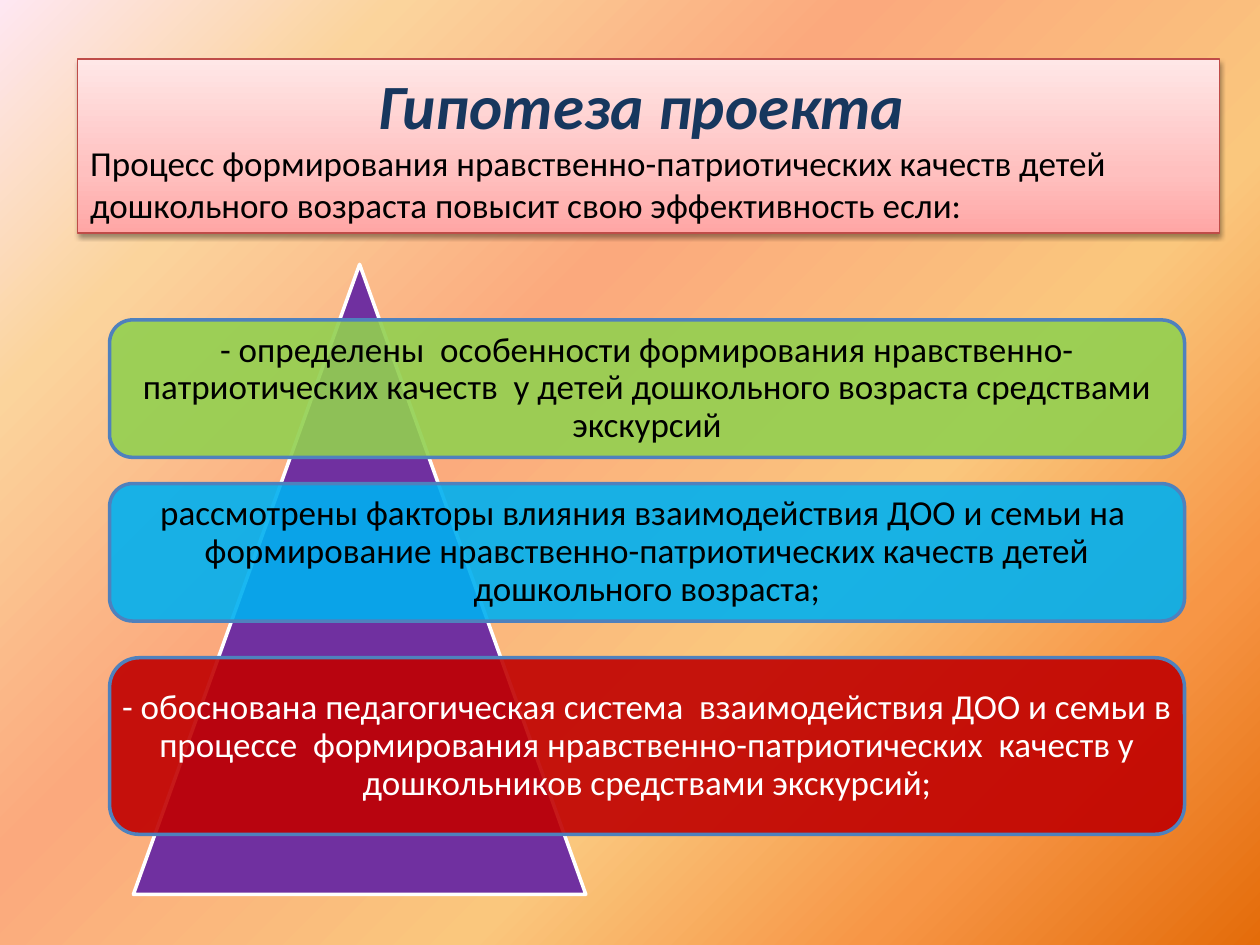
from dataclasses import dataclass

from pptx import Presentation
from pptx.dml.color import RGBColor
from pptx.enum.shapes import MSO_SHAPE
from pptx.enum.text import MSO_ANCHOR, MSO_AUTO_SIZE, PP_ALIGN
from pptx.oxml import parse_xml
from pptx.oxml.ns import nsdecls, qn
from pptx.util import Cm, Pt

TRIANGLE = MSO_SHAPE.ISOSCELES_TRIANGLE
ROUNDED = MSO_SHAPE.ROUNDED_RECTANGLE
RECTANGLE = MSO_SHAPE.RECTANGLE
MIDDLE = MSO_ANCHOR.MIDDLE
GROW = MSO_AUTO_SIZE.SHAPE_TO_FIT_TEXT
CENTER, LEFT = PP_ALIGN.CENTER, PP_ALIGN.LEFT


@dataclass(frozen=True)
class Theme:
    font: str = "Calibri"
    title_size: int = 36
    body_size: int = 20
    title: str = "17375E"
    dark: str = "000000"
    light: str = "FFFFFF"
    pyramid: str = "7030A0"
    bar_line: str = "4F81BD"
    header_line: str = "BF4C48"
    header: tuple = ((0, "FFA6A5"), (35, "FFC0BF"), (100, "FFE7E7"))
    backdrop: tuple = ((0, "E46C0A"), (18, "F79646"), (36, "FAC77D"),
                       (61, "FBA97D"), (82, "FBD49C"), (100, "FEE7F2"))


THEME = Theme()


def add_box(kind, left, top, width, height, fill, line, line_width):
    box = slide.shapes.add_shape(kind, Cm(left), Cm(top), Cm(width), Cm(height))
    box.shadow.inherit = False
    box.fill.solid()
    box.fill.fore_color.rgb = RGBColor.from_string(fill)
    box.line.color.rgb = RGBColor.from_string(line)
    box.line.width = Pt(line_width)
    return box


def set_gradient(element, stops, direction):
    """Replace the first solid fill inside element by a gradient."""
    solid = next(element.iter(qn("a:solidFill")))
    marks = "".join(f'<a:gs pos="{pos * 1000}"><a:srgbClr val="{color}"/></a:gs>'
                    for pos, color in stops)
    gradient = parse_xml(f'<a:gradFill {nsdecls("a")} rotWithShape="1">'
                         f'<a:gsLst>{marks}</a:gsLst>{direction}</a:gradFill>')
    solid.getparent().replace(solid, gradient)


prs = Presentation()
prs.slide_width, prs.slide_height = Cm(25.4), Cm(19.05)
slide = prs.slides.add_slide(prs.slide_layouts[6])

slide.background.fill.solid()
set_gradient(slide.element, THEME.backdrop,
             '<a:path path="circle"><a:fillToRect l="100000" t="100000"/></a:path>')

add_box(TRIANGLE, 2.69, 5.33, 9.12, 12.7, THEME.pyramid, THEME.light, 2)

conditions = [
    (6.45, 2.77, "92D050", THEME.dark,
     "- определены  особенности формирования нравственно-патриотических качеств  "
     "у детей дошкольного возраста средствами экскурсий"),
    (9.75, 2.77, "00B0F0", THEME.dark,
     "рассмотрены факторы влияния взаимодействия ДОО и семьи на  формирование "
     "нравственно-патриотических качеств детей дошкольного возраста;"),
    (13.26, 3.56, "C00000", THEME.light,
     "- обоснована педагогическая система  взаимодействия ДОО и семьи в процессе  "
     "формирования нравственно-патриотических  качеств у дошкольников "
     "средствами экскурсий;"),
]
for top, height, color, text_color, wording in conditions:
    bar = add_box(ROUNDED, 2.21, top, 21.67, height, color, THEME.bar_line, 2)
    bar_color = next(bar.element.iter(qn("a:srgbClr")))
    bar_color.append(parse_xml(f'<a:alpha {nsdecls("a")} val="90000"/>'))
    frame = bar.text_frame
    frame.word_wrap = True
    frame.vertical_anchor = MIDDLE
    # The rounded corners already push the text in by 0.29 of their radius.
    inset = Cm(0.2 - 0.29 * height / 6)
    frame.margin_left = frame.margin_right = inset
    frame.margin_top = frame.margin_bottom = inset
    condition = frame.paragraphs[0]
    condition.text = wording
    condition.alignment = CENTER
    condition.line_spacing = 0.9
    condition.font.name = THEME.font
    condition.font.size = Pt(THEME.body_size)
    condition.font.color.rgb = RGBColor.from_string(text_color)

header = add_box(RECTANGLE, 1.57, 1.19, 23.01, 3.51,
                 THEME.light, THEME.header_line, 0.75)
set_gradient(header.element, THEME.header, '<a:lin ang="16200000" scaled="0"/>')
next(header.element.iter(qn("a:effectLst"))).append(parse_xml(
    f'<a:outerShdw {nsdecls("a")} blurRad="{Pt(3.1)}" dist="{Pt(1.6)}" dir="5400000" '
    'rotWithShape="0"><a:srgbClr val="000000"><a:alpha val="38000"/></a:srgbClr>'
    '</a:outerShdw>'))
header.text_frame.word_wrap = True
header.text_frame.auto_size = GROW
title = header.text_frame.paragraphs[0]
premise = header.text_frame.add_paragraph()
title.text = "Гипотеза проекта "
title.font.bold = title.font.italic = True
premise.text = ("Процесс формирования нравственно-патриотических качеств детей "
                "дошкольного возраста повысит свою эффективность если:")
for paragraph, align, size, color in (
        (title, CENTER, THEME.title_size, THEME.title),
        (premise, LEFT, THEME.body_size, THEME.dark)):
    paragraph.alignment = align
    paragraph.font.name = THEME.font
    paragraph.font.size = Pt(size)
    paragraph.font.color.rgb = RGBColor.from_string(color)

prs.save("out.pptx")
